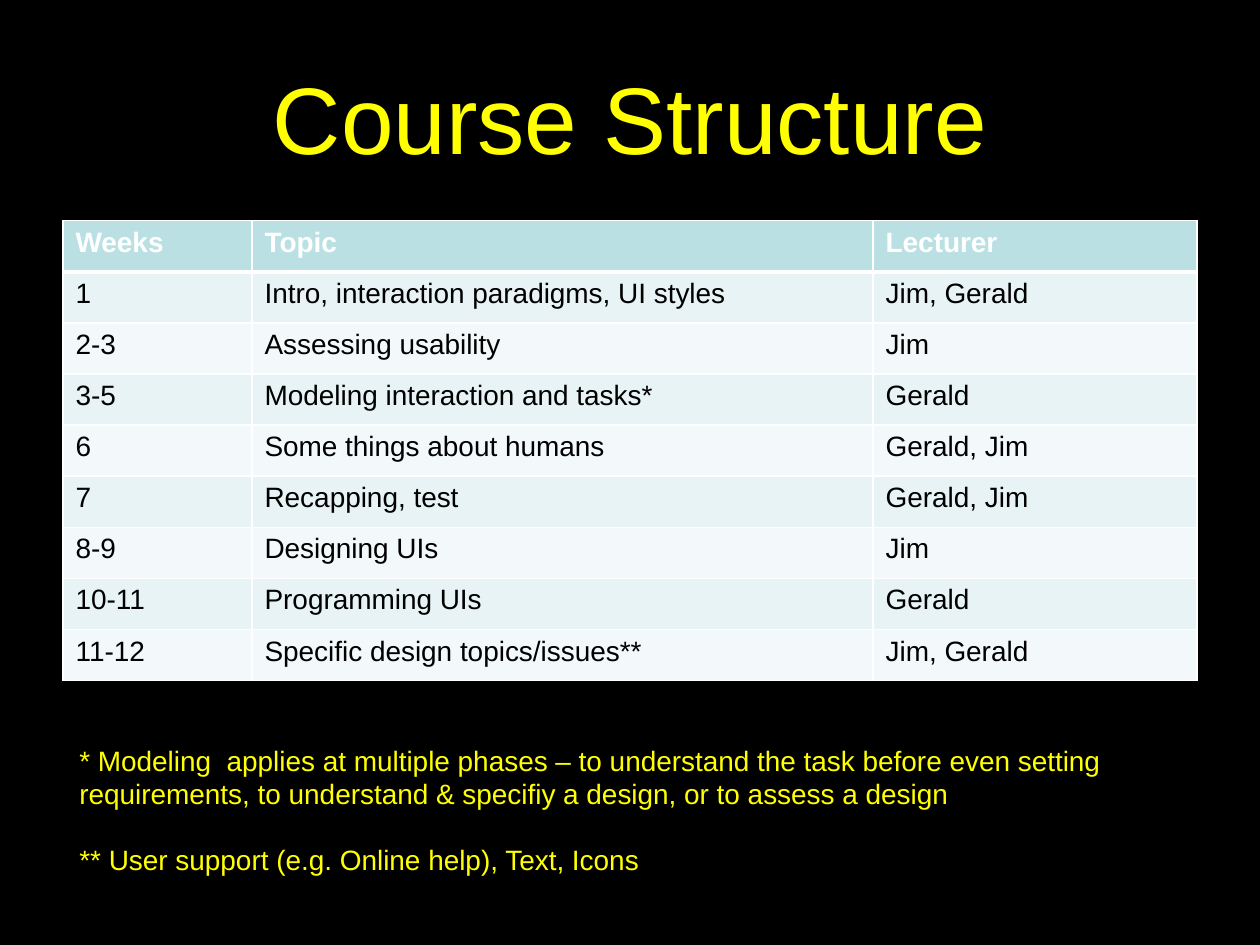
from dataclasses import dataclass

import pptx
import pptx.dml.color
import pptx.enum.text
import pptx.oxml
import pptx.oxml.ns
import pptx.util
from pptx.util import Cm, Pt


@dataclass(frozen=True)
class Theme:
    font: str = "Arial"
    back: str = "000000"
    accent: str = "FFFF00"
    ink: str = "000000"
    line: str = "FFFFFF"
    head: str = "BBE0E3"
    bands: tuple = ("E7F3F4", "F3F9FA")
    title: int = 54
    body: int = 16


THEME = Theme()
ALIGN = pptx.enum.text.PP_ALIGN
ANCHOR = pptx.enum.text.MSO_ANCHOR

ROWS = [
    ("Weeks", "Topic", "Lecturer"),
    ("1", "Intro, interaction paradigms, UI styles", "Jim, Gerald"),
    ("2-3", "Assessing usability", "Jim"),
    ("3-5", "Modeling interaction and tasks*", "Gerald"),
    ("6", "Some things about humans", "Gerald, Jim"),
    ("7", "Recapping, test", "Gerald, Jim"),
    ("8-9", "Designing UIs", "Jim"),
    ("10-11", "Programming UIs", "Gerald"),
    ("11-12", "Specific design topics/issues**", "Jim, Gerald"),
]
WIDTHS = (3.81, 12.52, 6.53)
HEIGHT = 1.03

NOTES = [
    "* Modeling  applies at multiple phases – to understand the task before even "
    "setting requirements, to understand & specifiy a design, or to assess a design",
    "** User support (e.g. Online help), Text, Icons",
]


def paint(fill, color):
    fill.solid()
    fill.fore_color.rgb = pptx.dml.color.RGBColor.from_string(color)


def write(frame, *lines, size=THEME.body, color=THEME.accent, bold=False,
          align=ALIGN.LEFT, gap=0):
    """Fill a text frame with one paragraph per line, gap points apart."""
    frame.word_wrap = True
    for i, line in enumerate(lines):
        para = frame.add_paragraph() if i else frame.paragraphs[0]
        para.alignment = align
        if i:
            para.space_before = Pt(gap)
        run = para.add_run()
        run.text = line
        run.font.name = THEME.font
        run.font.size = Pt(size)
        run.font.bold = bold
        run.font.color.rgb = pptx.dml.color.RGBColor.from_string(color)


def border(cell, **sides):
    """Draw cell borders; sides L, R, T and B give widths in points."""
    props = cell._tc.get_or_add_tcPr()
    for i, (side, width) in enumerate(sides.items()):
        props.insert(i, pptx.oxml.parse_xml(
            f'<a:ln{side} {pptx.oxml.ns.nsdecls("a")} w="{Pt(width)}">'
            f'<a:solidFill><a:srgbClr val="{THEME.line}"/></a:solidFill>'
            f'</a:ln{side}>'))


def add_title(slide, text):
    title = slide.shapes.title
    title.left, title.top = Cm(1.27), Cm(0.76)
    title.width, title.height = Cm(22.86), Cm(3.18)
    title.text_frame.vertical_anchor = ANCHOR.MIDDLE
    write(title.text_frame, text, size=THEME.title, align=ALIGN.CENTER)


def add_plan(slide):
    table = slide.shapes.add_table(
        len(ROWS), len(WIDTHS), Cm(1.27), Cm(4.45),
        Cm(sum(WIDTHS)), Cm(HEIGHT * len(ROWS))).table
    for col, width in zip(table.columns, WIDTHS):
        col.width = Cm(width)
    for r, texts in enumerate(ROWS):
        table.rows[r].height = Cm(HEIGHT)
        head = r == 0
        for c, text in enumerate(texts):
            cell = table.cell(r, c)
            paint(cell.fill, THEME.head if head else THEME.bands[(r - 1) % 2])
            border(cell, L=1, R=1, T=3 if r == 1 else 1, B=3 if head else 1)
            write(cell.text_frame, text, bold=head,
                  color=THEME.line if head else THEME.ink)


def add_notes(slide):
    box = slide.shapes.add_textbox(Cm(1.35), Cm(14.86), Cm(22.6), Cm(3))
    write(box.text_frame, *NOTES, gap=18.4)


def main():
    deck = pptx.Presentation()
    deck.slide_width, deck.slide_height = Cm(25.4), Cm(19.05)
    slide = deck.slides.add_slide(deck.slide_layouts[5])
    paint(slide.background.fill, THEME.back)
    add_title(slide, "Course Structure")
    add_plan(slide)
    add_notes(slide)
    deck.save("out.pptx")


if __name__ == "__main__":
    main()
